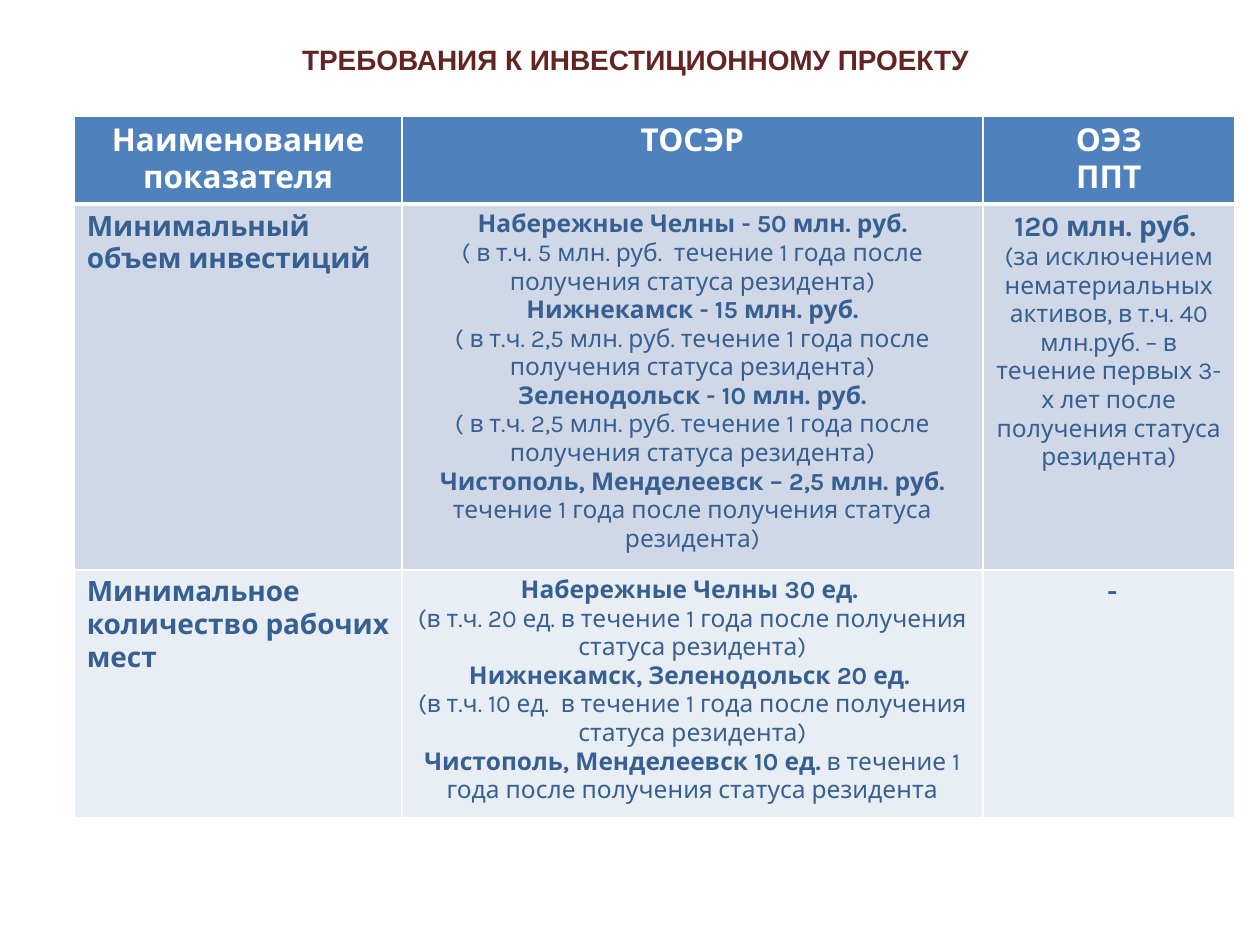
import pptx
import pptx.dml.color
import pptx.enum.text
import pptx.oxml
import pptx.oxml.ns
import pptx.util

HUE = {"title": "632523", "head": "4F81BD", "text": "376092",
       "dark": "D0D8E8", "pale": "E9EDF4", "white": "FFFFFF"}
UNIT = 0.1
COLS = [26, 46.1, 20]
ROWS = [7, 29, 19.7]
FILLS = ["head", "dark", "pale"]
YEAR = "течение 1 года после получения статуса резидента"


def grid(n):
    """Turn grid steps, 100 across and 75 down, into a length."""
    return pptx.util.Inches(n * UNIT)


def color(name):
    """Look up a colour by name."""
    return pptx.dml.color.RGBColor.from_string(HUE[name])


def bold(text, size=14):
    """Describe a bold run."""
    return text, size, True


def plain(text):
    """Describe a regular run."""
    return text, 14, False


def write(frame, paras, hue, face, center=True):
    """Fill a text frame, run by run."""
    frame.word_wrap = True
    align = pptx.enum.text.PP_ALIGN
    for i, runs in enumerate(paras):
        para = frame.paragraphs[0] if i == 0 else frame.add_paragraph()
        para.alignment = align.CENTER if center else align.LEFT
        for text, size, strong in runs:
            run = para.add_run()
            run.text = text
            run.font.name = face
            run.font.size = pptx.util.Pt(size)
            run.font.bold = strong
            run.font.color.rgb = color(hue)


def edge(cell, side, width):
    """Draw one white border of a cell."""
    cell._tc.get_or_add_tcPr().append(pptx.oxml.parse_xml(
        f'<a:ln{side} {pptx.oxml.ns.nsdecls("a")} w="{pptx.util.Pt(width)}">'
        f'<a:solidFill><a:srgbClr val="{HUE["white"]}"/></a:solidFill></a:ln{side}>'))


def title(slide):
    """Add the heading."""
    box = slide.shapes.add_textbox(grid(2), grid(2.9), grid(96.9), grid(3.7))
    write(box.text_frame, [[bold("ТРЕБОВАНИЯ К ИНВЕСТИЦИОННОМУ ПРОЕКТУ", 16)]],
          "title", "Arial")


def table(slide, data):
    """Add the table of requirements."""
    tab = slide.shapes.add_table(len(ROWS), len(COLS), grid(5.9), grid(9.2),
                                 grid(sum(COLS)), grid(sum(ROWS))).table
    tab.first_row = tab.horz_banding = False
    for col, width in zip(tab.columns, COLS):
        col.width = grid(width)
    for r, line in enumerate(data):
        tab.rows[r].height = grid(ROWS[r])
        for c, paras in enumerate(line):
            cell = tab.cell(r, c)
            write(cell.text_frame, paras, "text" if r else "white", "Karla",
                  r == 0 or c > 0)
            edge(cell, "L", 1)
            edge(cell, "R", 1)
            edge(cell, "T", 3 if r == 1 else 1)
            edge(cell, "B", 3 if r == 0 else 1)
            cell.fill.solid()
            cell.fill.fore_color.rgb = color(FILLS[r])


def main():
    """Build the slide."""
    deck = pptx.Presentation()
    deck.slide_width, deck.slide_height = grid(100), grid(75)
    slide = deck.slides.add_slide(deck.slide_layouts[6])
    title(slide)
    half = [plain(f"( в т.ч. 2,5 млн. руб. {YEAR})")]
    head = [[[bold("Наименование показателя", 18)]],
            [[bold("ТОСЭР", 18)]],
            [[bold("ОЭЗ", 18)], [bold("ППТ", 18)]]]
    funds = [[[bold("Минимальный объем инвестиций", 16)]],
             [[bold("Набережные Челны - 50 млн. руб.")],
              [plain(f"( в т.ч. 5 млн. руб.  {YEAR})")],
              [bold("Нижнекамск - 15 млн. руб.")], half,
              [bold("Зеленодольск - 10 млн. руб.")], half,
              [bold("Чистополь, Менделеевск – 2,5 млн. руб."),
               plain(f" {YEAR})")]],
             [[bold("120 млн. руб. ", 16)],
              [plain("(за исключением нематериальных активов, в т.ч. "
                     "40 млн.руб. – в течение первых 3-х лет после "
                     "получения статуса резидента)")]]]
    jobs = [[[bold("Минимальное количество рабочих мест", 16)]],
            [[bold("Набережные Челны 30 ед. ")],
             [plain(f"(в т.ч. 20 ед. в {YEAR})")],
             [bold("Нижнекамск, Зеленодольск 20 ед. ")],
             [plain(f"(в т.ч. 10 ед.  в {YEAR})")],
             [bold("Чистополь, Менделеевск 10 ед."), plain(f" в {YEAR}")]],
            [[bold(" -", 16)]]]
    table(slide, [head, funds, jobs])
    deck.save("out.pptx")


if __name__ == "__main__":
    main()
